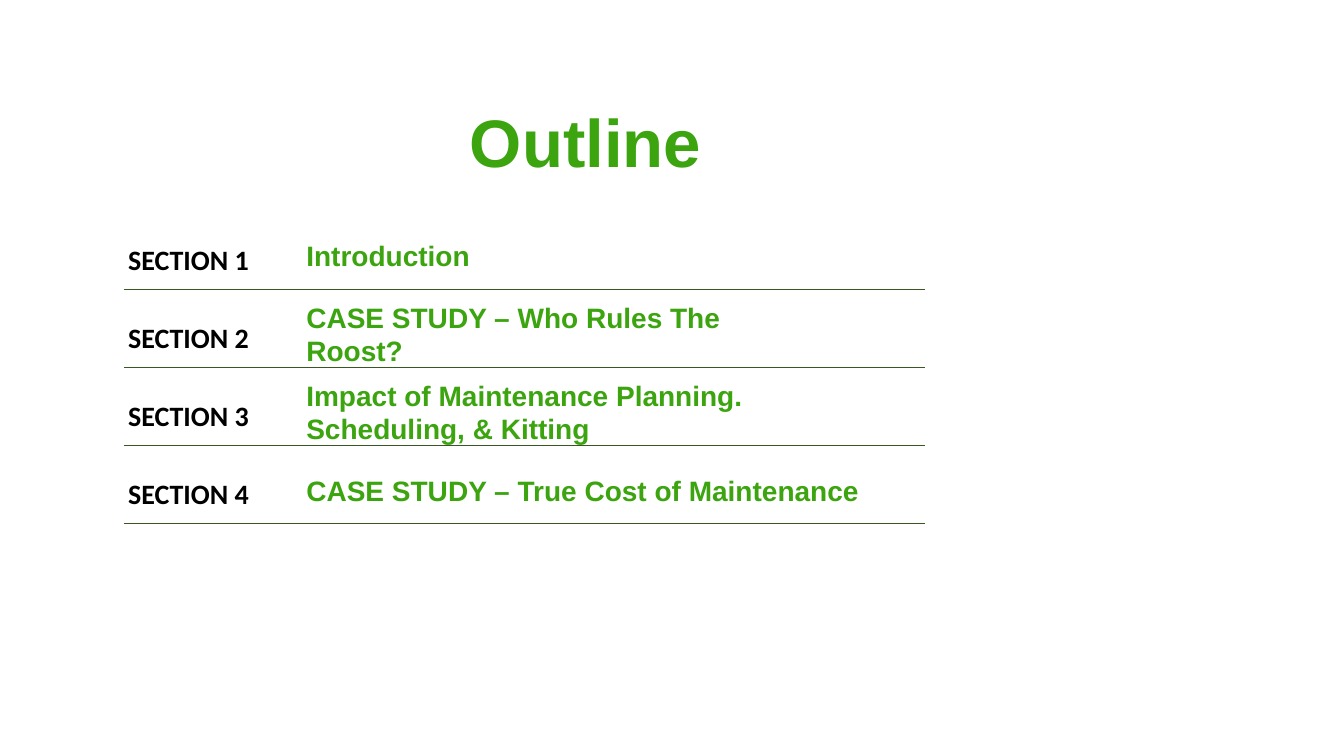
from pptx import Presentation
from pptx.dml.color import RGBColor
from pptx.enum.shapes import MSO_CONNECTOR as Conn
from pptx.enum.text import MSO_ANCHOR as Anchor, MSO_AUTO_SIZE as Fit, PP_ALIGN as Align
from pptx.oxml.ns import qn
from pptx.util import Cm, Pt
from lxml.etree import SubElement

TITLE = "Outline"
ROWS = [
    ("Introduction", 10.97),
    ("CASE STUDY – Who Rules The Roost?", 13.77),
    ("Impact of Maintenance Planning. Scheduling, & Kitting", 15.8),
    ("CASE STUDY – True Cost of Maintenance", 16.51),
]
COLORS = {"green": "3BA40F", "black": "000000", "rule": "385723", "white": "FFFFFF"}

TOP, PITCH, HIGH = 5.59, 1.97, 1.7
LABEL_X, LABEL_W, TOPIC_X = 2.72, 4.62, 7.21
RULE_X, RULE_END = 3.12, 23.32
PAD = 0.51


def color(name):
    return RGBColor.from_string(COLORS[name])


def style(para, face, size, name):
    font = para.font
    font.name, font.size, font.bold = face, Pt(size), True
    font.color.rgb = color(name)


def add_text(slide, text, x, y, wide, face, name, anchor, pad):
    box = slide.shapes.add_textbox(Cm(x), Cm(y), Cm(wide), Cm(HIGH))
    frame = box.text_frame
    frame.word_wrap = True
    frame.auto_size = Fit.NONE
    frame.vertical_anchor = anchor
    frame.margin_left = frame.margin_right = Cm(PAD)
    frame.margin_top = frame.margin_bottom = Cm(pad)
    frame.text = text
    style(frame.paragraphs[0], face, 20, name)


def add_rule(slide, y):
    rule = slide.shapes.add_connector(Conn.STRAIGHT, Cm(RULE_X), Cm(y), Cm(RULE_END), Cm(y))
    rule.line.color.rgb = color("rule")
    rule.line.width = Pt(0.5)
    SubElement(rule._element.spPr, qn("a:effectLst"))


def add_title(slide):
    title = slide.shapes.title
    title.left, title.top, title.width, title.height = Cm(1.73), Cm(1.04), Cm(26.06), Cm(3.68)
    frame = title.text_frame
    frame.text = TITLE
    frame.auto_size = Fit.NONE
    frame.vertical_anchor = Anchor.BOTTOM
    para = frame.paragraphs[0]
    para.alignment = Align.CENTER
    para.line_spacing = 0.9
    style(para, "Arial", 48, "green")


def main():
    deck = Presentation()
    deck.slide_width, deck.slide_height = Cm(33.87), Cm(19.05)
    slide = deck.slides.add_slide(deck.slide_layouts[5])
    fill = slide.background.fill
    fill.solid()
    fill.fore_color.rgb = color("white")
    add_title(slide)
    for i, (topic, wide) in enumerate(ROWS):
        y = TOP + i * PITCH
        add_text(slide, topic, TOPIC_X, y, wide, "Arial", "green", Anchor.MIDDLE, PAD / 2)
        add_text(slide, f"SECTION {i + 1}", LABEL_X, y, LABEL_W, "Calibri", "black", Anchor.TOP, PAD)
        add_rule(slide, y + HIGH)
    deck.save("out.pptx")


if __name__ == "__main__":
    main()
